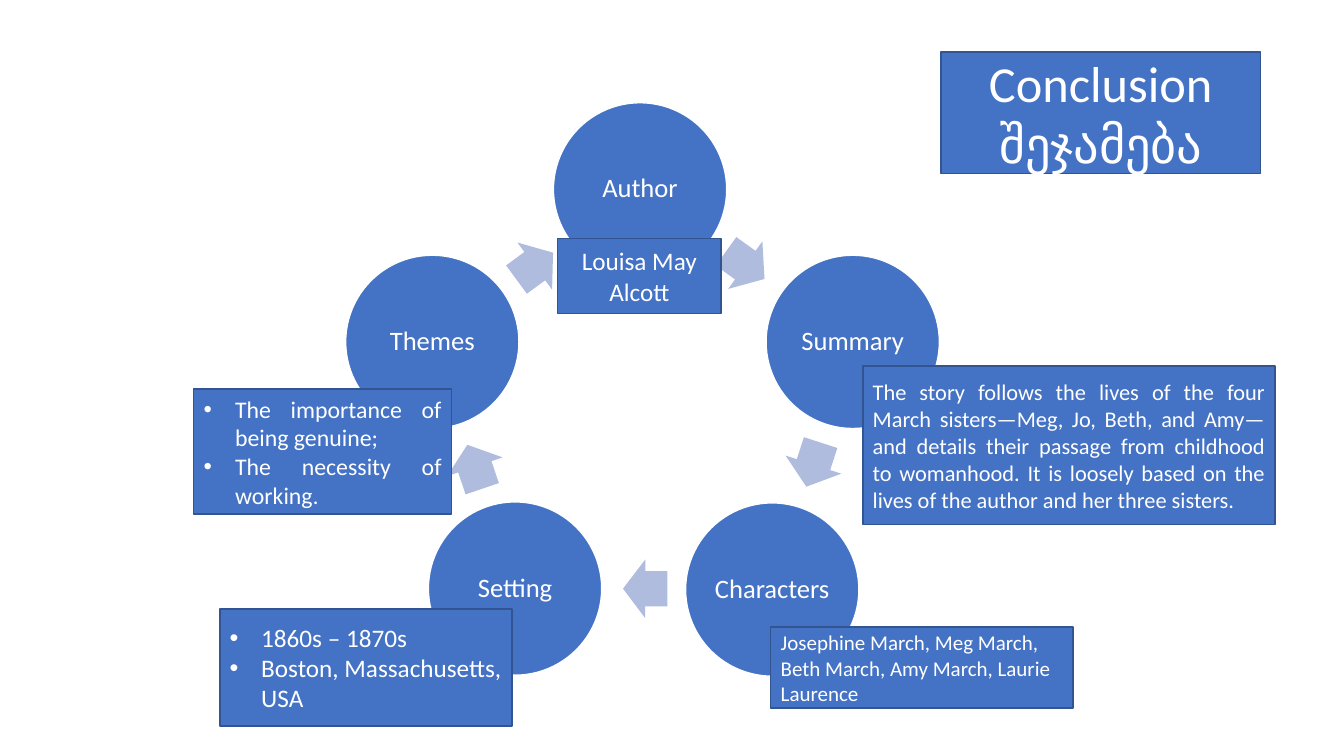
from dataclasses import dataclass

from lxml.etree import SubElement
from pptx import Presentation
from pptx.dml.color import RGBColor
from pptx.enum.shapes import MSO_SHAPE as Preset
from pptx.enum.text import MSO_ANCHOR as Anchor, PP_ALIGN as Align
from pptx.oxml.ns import qn
from pptx.shapes.autoshape import Shape
from pptx.slide import Slide
from pptx.text.text import _Paragraph as Paragraph
from pptx.util import Pt

COLORS = {"blue": "4472C4", "edge": "325491", "arrow": "B0BCDE", "white": "FFFFFF"}
FONT = "Calibri"
CIRCLE_SIZE = 123.8
ARROW_HEIGHT = 41.8
BULLET_INDENT = 22.5


@dataclass(frozen=True)
class Topic:
    label: str
    left: float
    top: float


@dataclass(frozen=True)
class Arrow:
    left: float
    top: float
    width: float
    angle: float


@dataclass(frozen=True)
class Panel:
    lines: tuple[str, ...]
    left: float
    top: float
    width: float
    height: float
    size: float
    align: Align = Align.LEFT
    bulleted: bool = False


TOPICS = (
    Topic("Author", 395.3, 73.4),
    Topic("Summary", 547.2, 182.3),
    Topic("Characters", 489.7, 359.2),
    Topic("Setting", 306, 358.5),
    Topic("Themes", 246.9, 182.3),
)

ARROWS = (
    Arrow(515.5, 168.5, 33.8, 35.7),
    Arrow(564.5, 311, 33.1, 108),
    Arrow(445, 399.6, 31.7, 180.2),
    Arrow(322.6, 312.5, 33.1, 251.3),
    Arrow(365.8, 169.2, 32.4, 323.7),
)

TITLE = Panel(("Conclusion\nშეჯამება",), 672.2, 37.2, 228.2, 86.6, 36, Align.CENTER)
AUTHOR = Panel(("Louisa May Alcott",), 398.3, 170.5, 116.7, 53.3, 18, Align.CENTER)
THEMES = Panel(
    ("The importance of being genuine;", "The necessity of working"),
    138.3, 278, 184.3, 89.3, 17, Align.JUSTIFY, True,
)
SETTING = Panel(
    ("1860s – 1870s", "Boston, Massachusetts, USA"),
    157, 435, 208.6, 83.7, 18, Align.LEFT, True,
)
CHARACTERS = Panel(
    ("Josephine March, Meg March, Beth March, Amy March, Laurie Laurence",),
    550.6, 448, 216, 57.8, 15,
)
SUMMARY = Panel(
    (
        "The story follows the lives of the four March sisters—Meg, Jo, Beth, and Amy—"
        "and details their passage from childhood to womanhood. It is loosely based on "
        "the lives of the author and her three sisters.",
    ),
    616.3, 261.4, 294.5, 113.4, 16, Align.JUSTIFY,
)


def color(name: str) -> RGBColor:
    return RGBColor.from_string(COLORS[name])


def add_filled(slide: Slide, preset: Preset, left: float, top: float,
               width: float, height: float, fill: str, edge: str | None) -> Shape:
    shape = slide.shapes.add_shape(preset, Pt(left), Pt(top), Pt(width), Pt(height))
    shape.shadow.inherit = False
    shape.fill.solid()
    shape.fill.fore_color.rgb = color(fill)
    if edge:
        shape.line.color.rgb = color(edge)
        shape.line.width = Pt(1)
    else:
        shape.line.fill.background()
    return shape


def format_runs(paragraph: Paragraph, size: float, align: Align) -> None:
    paragraph.alignment = align
    for run in paragraph.runs:
        run.font.name = FONT
        run.font.size = Pt(size)
        run.font.color.rgb = color("white")


def add_bullet(paragraph: Paragraph) -> None:
    properties = paragraph._p.get_or_add_pPr()
    properties.set("marL", str(Pt(BULLET_INDENT)))
    properties.set("indent", str(-Pt(BULLET_INDENT)))
    SubElement(properties, qn("a:buFont"), typeface="Arial")
    SubElement(properties, qn("a:buChar"), char="•")


def draw_topic(slide: Slide, topic: Topic) -> None:
    circle = add_filled(slide, Preset.OVAL, topic.left, topic.top,
                        CIRCLE_SIZE, CIRCLE_SIZE, "blue", "white")
    frame = circle.text_frame
    frame.word_wrap = False
    frame.vertical_anchor = Anchor.MIDDLE
    frame.margin_left = frame.margin_right = Pt(2)
    frame.margin_top = frame.margin_bottom = Pt(2)
    frame.text = topic.label
    frame.paragraphs[0].line_spacing = 0.9
    format_runs(frame.paragraphs[0], 19, Align.CENTER)


def draw_arrow(slide: Slide, arrow: Arrow) -> None:
    shape = add_filled(slide, Preset.RIGHT_ARROW, arrow.left, arrow.top,
                       arrow.width, ARROW_HEIGHT, "arrow", None)
    shape.adjustments[0] = 0.6
    shape.adjustments[1] = 0.5
    shape.rotation = arrow.angle


def draw_panel(slide: Slide, panel: Panel) -> Shape:
    box = add_filled(slide, Preset.RECTANGLE, panel.left, panel.top,
                     panel.width, panel.height, "blue", "edge")
    frame = box.text_frame
    frame.word_wrap = True
    frame.vertical_anchor = Anchor.MIDDLE
    for index, line in enumerate(panel.lines):
        paragraph = frame.add_paragraph() if index else frame.paragraphs[0]
        paragraph.text = line
        if panel.bulleted:
            add_bullet(paragraph)
        format_runs(paragraph, panel.size, panel.align)
    return box


def main() -> None:
    deck = Presentation()
    deck.slide_width, deck.slide_height = Pt(960), Pt(540)
    slide = deck.slides.add_slide(deck.slide_layouts[6])

    draw_panel(slide, TITLE)
    for topic, arrow in zip(TOPICS, ARROWS):
        draw_topic(slide, topic)
        draw_arrow(slide, arrow)
    draw_panel(slide, AUTHOR)

    last_theme = draw_panel(slide, THEMES).text_frame.paragraphs[-1]
    full_stop = last_theme.add_run()
    full_stop.text = "."
    format_runs(last_theme, THEMES.size, THEMES.align)
    full_stop.font.size = Pt(16)

    for panel in (SETTING, CHARACTERS, SUMMARY):
        draw_panel(slide, panel)
    deck.save("out.pptx")


if __name__ == "__main__":
    main()
